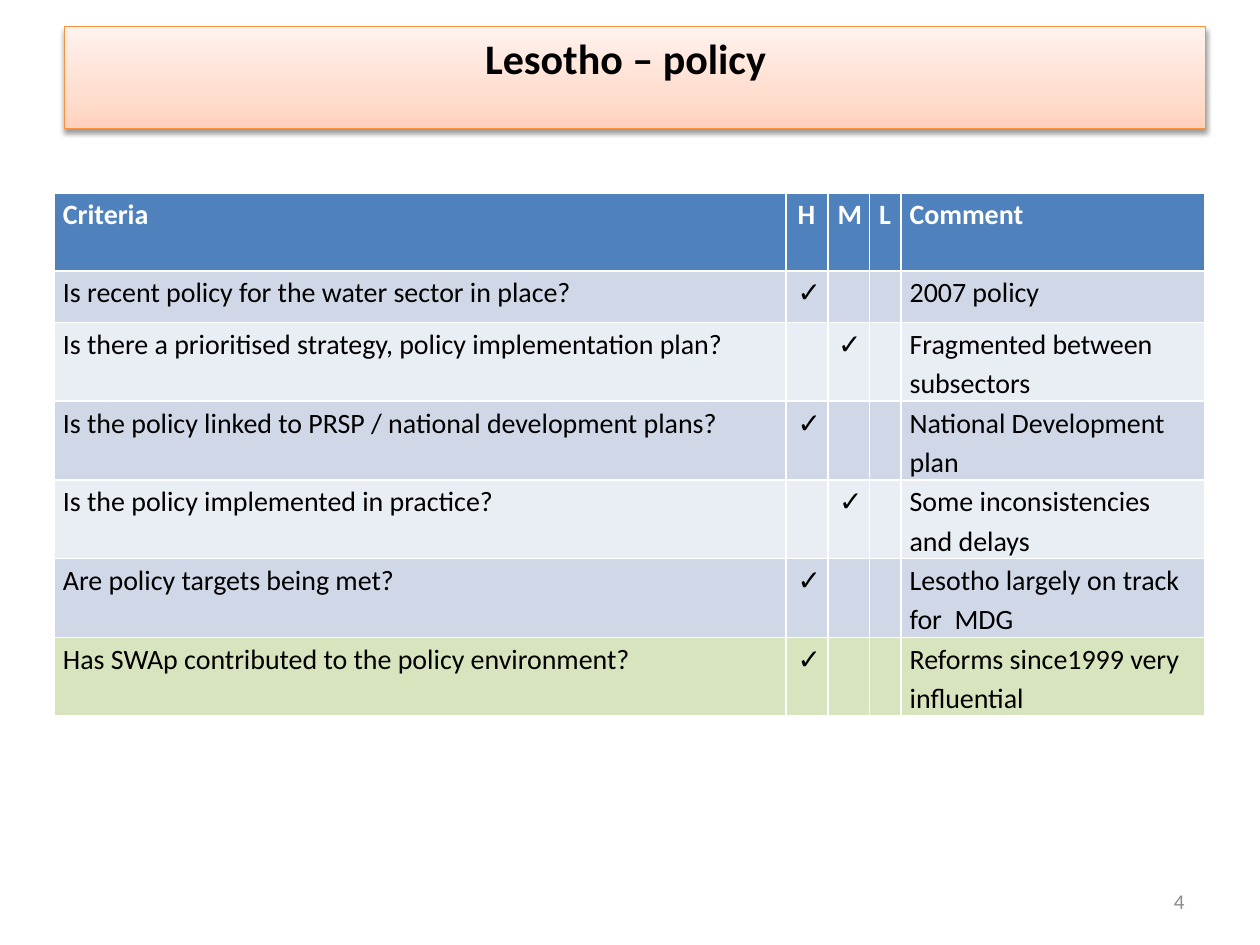
from lxml import etree
from pptx import Presentation
from pptx.dml.color import RGBColor
from pptx.enum.text import MSO_ANCHOR as Anchor, MSO_AUTO_SIZE as AutoSize, PP_ALIGN as Align
from pptx.oxml import parse_xml
from pptx.oxml.ns import nsdecls, qn
from pptx.util import Inches, Pt

COLORS = {
    "text": "000000", "white": "FFFFFF", "number": "8C8C8C",
    "header": "4F81BD", "band_dark": "D0D8E8", "band_light": "E9EDF4",
    "highlight": "D7E4BD", "title_line": "F69240",
}
TITLE_GRADIENT = [(0, "FFD2BD"), (35, "FFDED0"), (100, "FFF2ED")]
COLUMN_WIDTHS = [5.81, 0.33, 0.33, 0.25, 2.41]
HEADERS = ["Criteria", "H", "M", "L", "Comment"]
# Criterion, rating column, comment
CRITERIA = [
    ("Is recent policy for the water sector in place?", "H", "2007 policy"),
    ("Is there a prioritised strategy, policy implementation plan?", "M",
     "Fragmented between subsectors"),
    ("Is the policy linked to PRSP / national development plans?", "H",
     "National Development plan"),
    ("Is the policy implemented in practice?", "M", "Some inconsistencies and delays"),
    ("Are policy targets being met?", "H", "Lesotho largely on track for  MDG"),
    ("Has SWAp contributed to the policy environment?", "H",
     "Reforms since1999 very influential"),
]


def rgb(name):
    return RGBColor.from_string(COLORS[name])


def write_text(frame, text, size=16, color="text", bold=False, align=Align.LEFT,
               spacing=None, left=0, hanging=0):
    paragraph = frame.paragraphs[0]
    paragraph.alignment = align
    if spacing:
        paragraph.line_spacing = spacing
    if left:
        properties = paragraph._p.get_or_add_pPr()
        properties.set("marL", str(Inches(left)))
        properties.set("indent", str(-Inches(hanging)))
    run = paragraph.add_run()
    run.text = text
    font = run.font
    font.name, font.size, font.bold = "Calibri", Pt(size), bold
    font.color.rgb = rgb(color)


def add_title(slide, left, top, width, height):
    title = slide.shapes.title
    title.left, title.top, title.width, title.height = left, top, width, height
    # Three-stop gradient, light at the top
    title.fill.gradient()
    title.fill.gradient_angle = 90
    stops = title._element.spPr.find(qn("a:gradFill")).find(qn("a:gsLst"))
    for stop in list(stops):
        stops.remove(stop)
    for position, color in TITLE_GRADIENT:
        stop = etree.SubElement(stops, qn("a:gs"), pos=str(position * 1000))
        etree.SubElement(stop, qn("a:srgbClr"), val=color)
    title.line.color.rgb = rgb("title_line")
    title.line.width = Pt(0.75)
    # Soft shadow below the banner
    title._element.spPr.append(parse_xml(
        f'<a:effectLst {nsdecls("a")}><a:outerShdw blurRad="{Pt(3.1)}" dist="{Pt(1.6)}" '
        'dir="5400000" rotWithShape="0"><a:srgbClr val="000000"><a:alpha val="38000"/>'
        '</a:srgbClr></a:outerShdw></a:effectLst>'))
    frame = title.text_frame
    frame.word_wrap = True
    frame.auto_size = AutoSize.NONE
    frame.vertical_anchor = Anchor.TOP
    frame.margin_right = Inches(0.25)
    write_text(frame, "Lesotho – policy", size=24, bold=True, align=Align.CENTER)


def fill_cell(cell, text, fill, **text_format):
    cell.fill.solid()
    cell.fill.fore_color.rgb = rgb(fill)
    if text:
        cell.margin_left = cell.margin_right = Inches(0.07)
        cell.margin_top = cell.margin_bottom = 0
        write_text(cell.text_frame, text, spacing=1.15, **text_format)


def add_criteria_table(slide, left, top, width, height):
    rows = [HEADERS] + [
        [criterion] + ["✓" if mark == rating else "" for mark in HEADERS[1:4]] + [comment]
        for criterion, rating, comment in CRITERIA]
    table = slide.shapes.add_table(len(rows), len(HEADERS), left, top, width, height).table
    for column, column_width in zip(table.columns, COLUMN_WIDTHS):
        column.width = Inches(column_width)
    for row_index, values in enumerate(rows):
        table.rows[row_index].height = Inches(0.41 if row_index == 1 else 0.62)
        header = row_index == 0
        if header:
            fill = "header"
        elif row_index == len(rows) - 1:
            fill = "highlight"
        else:
            fill = "band_dark" if row_index % 2 else "band_light"
        for column_index, value in enumerate(values):
            centered = (header and HEADERS[column_index] in "ML") or (row_index, column_index) == (2, 2)
            indent = {0: (0.38, 0.38), 1: (0.02, 0), 2: (0.02, 0)}.get(column_index, (0, 0))
            fill_cell(table.cell(row_index, column_index), value, fill,
                      color="white" if header else "text", bold=header,
                      align=Align.CENTER if centered else Align.LEFT,
                      left=indent[0], hanging=indent[1])


def add_slide_number(slide, left, top, width, height):
    frame = slide.shapes.add_textbox(left, top, width, height).text_frame
    frame.word_wrap = True
    frame.vertical_anchor = Anchor.MIDDLE
    write_text(frame, "4", size=12, color="number", align=Align.RIGHT)


def main():
    presentation = Presentation()
    presentation.slide_width, presentation.slide_height = Inches(10), Inches(7.5)
    slide = presentation.slides.add_slide(presentation.slide_layouts[5])
    add_criteria_table(slide, Inches(0.43), Inches(1.53), Inches(9.13), Inches(4.09))
    add_title(slide, Inches(0.51), Inches(0.21), Inches(9.06), Inches(0.81))
    add_slide_number(slide, Inches(7.17), Inches(6.95), Inches(2.33), Inches(0.4))
    presentation.save("out.pptx")


if __name__ == "__main__":
    main()
